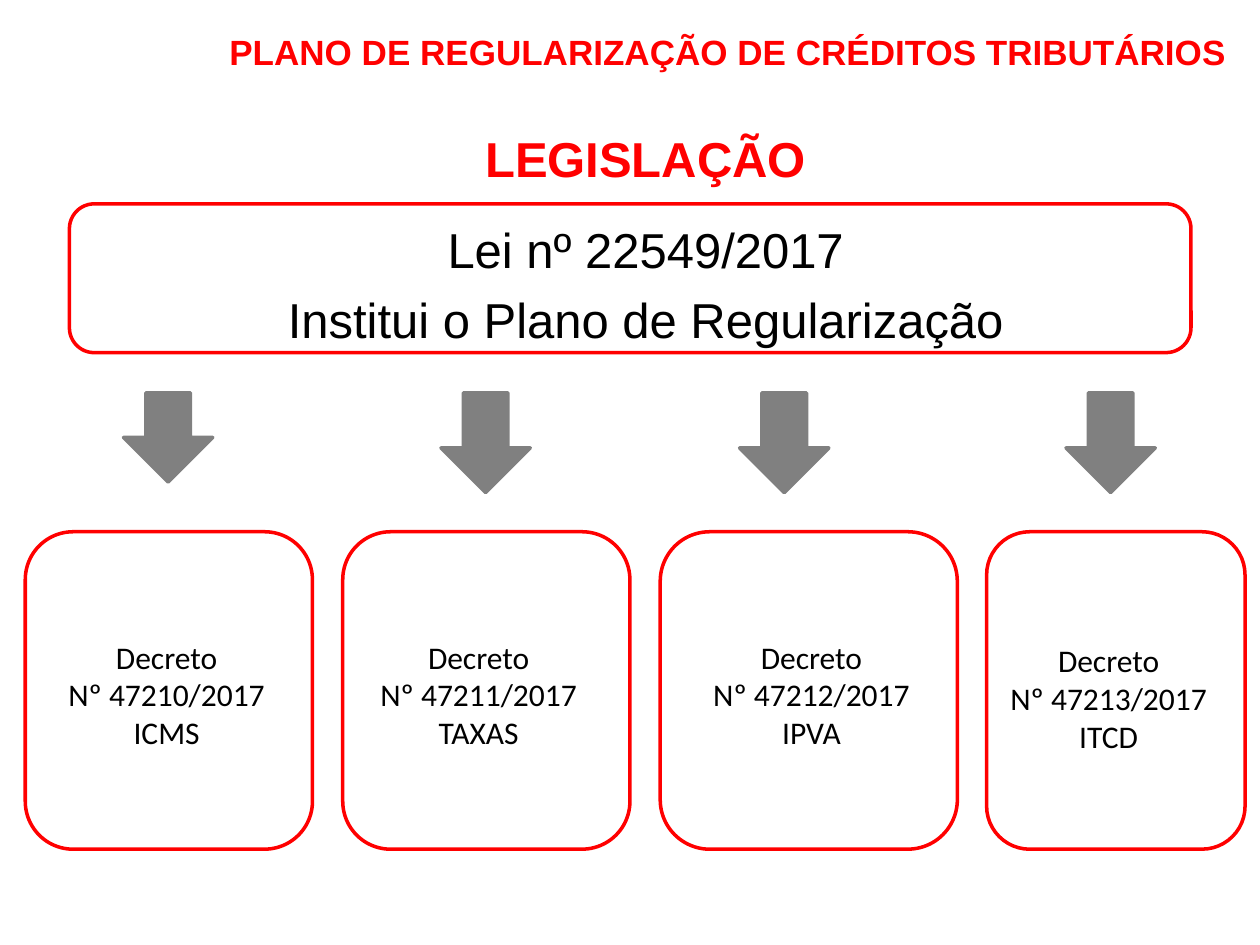
from pptx import Presentation, util as u
from pptx.dml import color
from pptx.enum import shapes, text

COLORS = {"red": "FF0000", "black": "000000", "gray": "808080"}
SHAPE = shapes.MSO_SHAPE

prs = Presentation()
prs.slide_width, prs.slide_height = u.Cm(25.4), u.Cm(19.05)
slide = prs.slides.add_slide(prs.slide_layouts[6])


def add_lines(box, lines, align, font, size, hue, bold=False, wrap=True):
    """Add a text box with one paragraph per line and return its frame."""
    frame = slide.shapes.add_textbox(*map(u.Cm, box)).text_frame
    frame.word_wrap = wrap
    frame.text = "\n".join(lines)
    for paragraph in frame.paragraphs:
        paragraph.alignment = align
        for run in paragraph.runs:
            run.font.name, run.font.size, run.font.bold = font, u.Pt(size), bold
            run.font.color.rgb = color.RGBColor.from_string(COLORS[hue])
    return frame


def add_outline(kind, box, line, fill=None):
    """Add a preset shape with a 2 pt line and an optional fill."""
    figure = slide.shapes.add_shape(kind, *map(u.Cm, box))
    figure.shadow.inherit = False
    figure.line.color.rgb = color.RGBColor.from_string(COLORS[line])
    figure.line.width = u.Pt(2)
    if fill:
        figure.fill.solid()
        figure.fill.fore_color.rgb = color.RGBColor.from_string(COLORS[fill])
    else:
        figure.fill.background()


# Title
title = add_lines((2.11, 0.13, 22.86, 1.8),
                  ["PLANO DE REGULARIZAÇÃO DE CRÉDITOS TRIBUTÁRIOS"],
                  text.PP_ALIGN.RIGHT, "Arial", 20, "red", bold=True)
title.vertical_anchor = text.MSO_ANCHOR.MIDDLE

# Heading and law
law = add_lines((1.09, 2.34, 23.85, 16.21),
                ["LEGISLAÇÃO", "Lei nº 22549/2017", "Institui o Plano de Regularização"],
                text.PP_ALIGN.CENTER, "Arial", 28, "black")
law.margin_top = u.Cm(0.25)
heading, *law_lines = law.paragraphs
heading.space_after = u.Pt(12)
heading.runs[0].font.bold = True
heading.runs[0].font.color.rgb = color.RGBColor.from_string(COLORS["red"])
for law_line in law_lines:
    law_line.space_before = u.Pt(6.4)
add_outline(SHAPE.ROUNDED_RECTANGLE, (1.4, 4.11, 22.61, 3), "red")

# Decrees: number, tax, card left and width, arrow left and height, label box
decrees = [
    (47210, "ICMS", 0.51, 5.79, 2.49, 1.8, (0.3, 12.73, 6.12, 2.57)),
    (47211, "TAXAS", 6.91, 5.79, 8.89, 2.01, (7.39, 12.73, 4.52, 3.33)),
    (47212, "IPVA", 13.31, 5.99, 14.91, 2.01, (14.1, 12.73, 4.52, 3.33)),
    (47213, "ITCD", 19.89, 5.21, 21.49, 2.01, (20.09, 12.8, 4.52, 3.33)),
]
for number, tax, card_left, card_width, arrow_left, arrow_height, label_box in decrees:
    add_outline(SHAPE.ROUNDED_RECTANGLE, (card_left, 10.72, card_width, 6.4), "red")
    add_outline(SHAPE.DOWN_ARROW, (arrow_left, 7.92, 1.8, arrow_height), "gray", "gray")
    label = add_lines(label_box, ["Decreto", f"Nº {number}/2017", tax],
                      text.PP_ALIGN.CENTER, "Calibri", 18, "black",
                      wrap=number == 47210)
    label.auto_size = text.MSO_AUTO_SIZE.SHAPE_TO_FIT_TEXT

prs.save("out.pptx")
